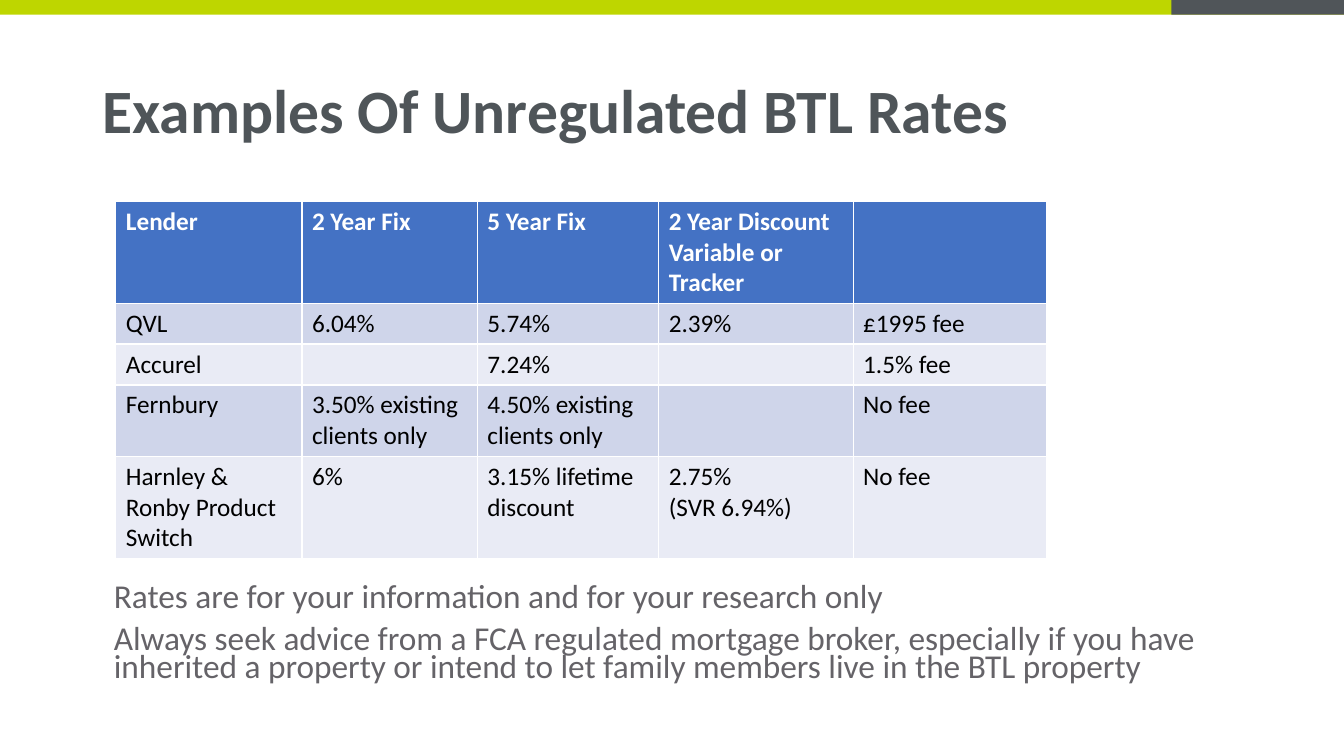
from pptx import Presentation
from pptx.dml.color import RGBColor
from pptx.enum.shapes import MSO_SHAPE as Preset
from pptx.enum.text import MSO_ANCHOR as Anchor
from pptx.util import Cm, Pt

TITLE = "Examples Of Unregulated BTL Rates"
RATES = [
    ("Lender", "2 Year Fix", "5 Year Fix", "2 Year Discount Variable or Tracker", ""),
    ("QVL", "6.04%", "5.74%", "2.39%", "£1995 fee"),
    ("Accurel", "", "7.24%", "", "1.5% fee"),
    ("Fernbury", "3.50% existing clients only", "4.50% existing clients only", "", "No fee"),
    ("Harnley & Ronby Product Switch", "6%", "3.15% lifetime discount",
     "2.75%\n(SVR 6.94%)", "No fee"),
]
ROW_LINES = [3, 1, 1, 2, 3]
COLUMN_WIDTHS = [4.69, 4.42, 4.57, 4.9, 4.88]
NOTES = [
    "Rates are for your information and for your research only",
    "Always seek advice from a FCA regulated mortgage broker, especially if you have "
    "inherited a property or intend to let family members live in the BTL property",
]
COLOURS = {
    "lime": "BED600", "slate": "505559", "title": "4F5559", "notes": "656368",
    "header": "4472C4", "odd": "CFD5EA", "even": "E9EBF5",
    "white": "FFFFFF", "black": "000000",
}
FONT = "Calibri"
SLIDE_WIDTH, SLIDE_HEIGHT = 33.87, 19.05
BANNER_HEIGHT, ACCENT_WIDTH = 0.37, 4.35
LINE_HEIGHT, CELL_PADDING = 0.77, 0.26


def colour(key):
    return RGBColor.from_string(COLOURS[key])


def style(paragraph, size, key, bold=False):
    font = paragraph.font
    font.name, font.size, font.bold = FONT, Pt(size), bold
    font.color.rgb = colour(key)


def add_bar(slide, left, width, key):
    bar = slide.shapes.add_shape(Preset.RECTANGLE, Cm(left), 0, Cm(width), Cm(BANNER_HEIGHT))
    bar.shadow.inherit = False
    bar.fill.solid()
    bar.fill.fore_color.rgb = colour(key)
    bar.line.fill.background()


def add_text(slide, box, lines, size, key, spacing, gap=0, bold=False, anchor=Anchor.TOP):
    frame = slide.shapes.add_textbox(*map(Cm, box)).text_frame
    frame.word_wrap = True
    frame.vertical_anchor = anchor
    frame.text = "\n".join(lines)
    for index, paragraph in enumerate(frame.paragraphs):
        paragraph.line_spacing = spacing
        paragraph.space_before = Pt(gap if index else 0)
        style(paragraph, size, key, bold)


def add_rates(slide):
    heights = [lines * LINE_HEIGHT + CELL_PADDING for lines in ROW_LINES]
    table = slide.shapes.add_table(
        len(RATES), len(COLUMN_WIDTHS), Cm(2.92), Cm(5.07),
        Cm(sum(COLUMN_WIDTHS)), Cm(sum(heights))).table
    for column, width in zip(table.columns, COLUMN_WIDTHS):
        column.width = Cm(width)
    for index, (row, height, values) in enumerate(zip(table.rows, heights, RATES)):
        row.height = Cm(height)
        is_header = index == 0
        band = "header" if is_header else "odd" if index % 2 else "even"
        for cell, value in zip(row.cells, values):
            cell.fill.solid()
            cell.fill.fore_color.rgb = colour(band)
            cell.text = value
            for paragraph in cell.text_frame.paragraphs:
                style(paragraph, 18, "white" if is_header else "black", is_header)


def main():
    deck = Presentation()
    deck.slide_width, deck.slide_height = Cm(SLIDE_WIDTH), Cm(SLIDE_HEIGHT)
    slide = deck.slides.add_slide(deck.slide_layouts[6])
    add_bar(slide, 0, SLIDE_WIDTH, "lime")
    add_bar(slide, SLIDE_WIDTH - ACCENT_WIDTH, ACCENT_WIDTH, "slate")
    add_text(slide, (2.33, 1.01, 26.7, 3.68), [TITLE], 44, "title", 0.9,
             bold=True, anchor=Anchor.MIDDLE)
    add_text(slide, (2.62, 14.65, 29.21, 2.55), NOTES, 23.8, "notes", 0.7, gap=10)
    add_rates(slide)
    deck.save("out.pptx")


if __name__ == "__main__":
    main()
